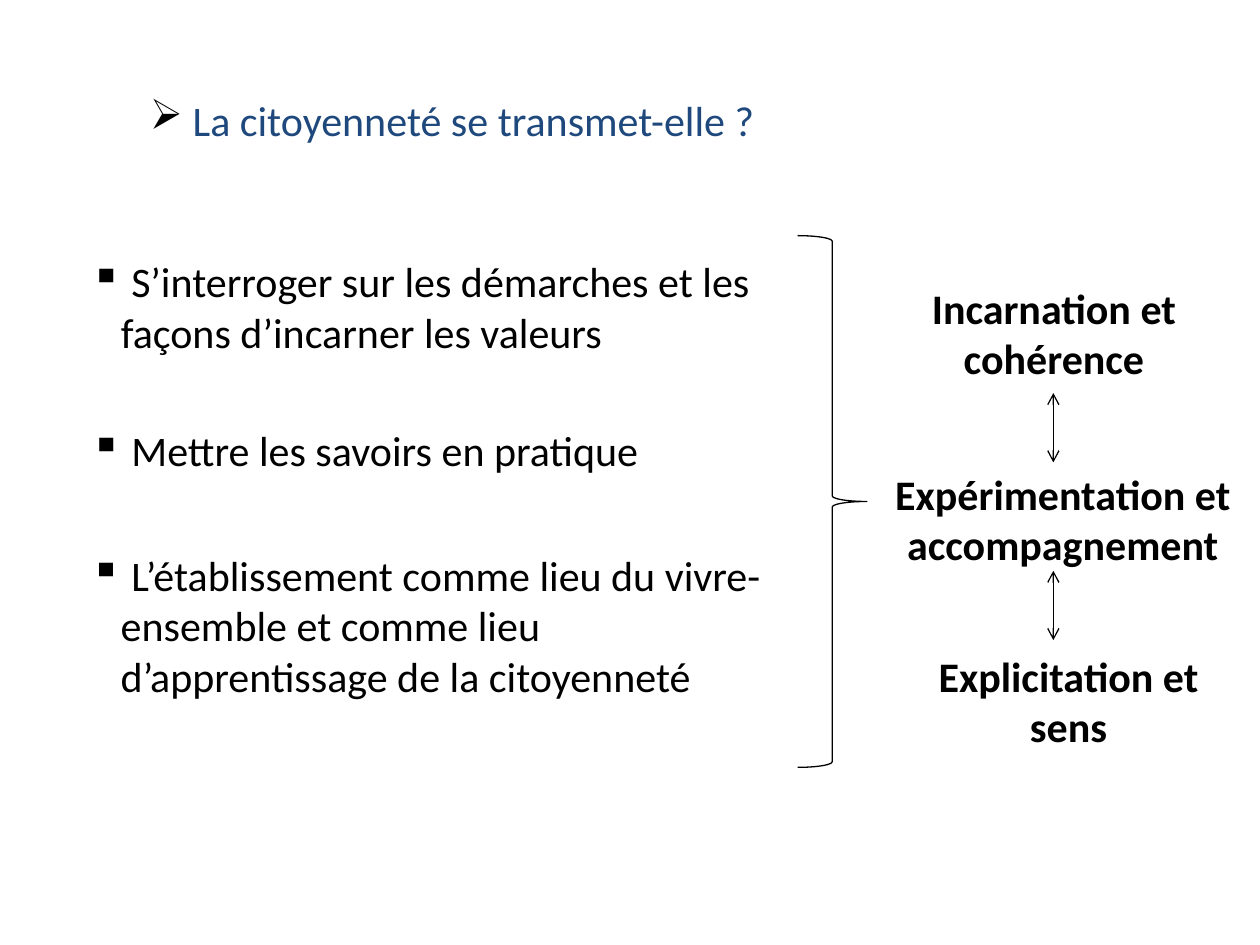
"""Build a slide on how citizenship is passed on."""
from lxml import etree
from pptx import Presentation
from pptx.dml.color import RGBColor
from pptx.enum.shapes import MSO_CONNECTOR, MSO_SHAPE
from pptx.enum.text import PP_ALIGN
from pptx.oxml.ns import qn
from pptx.util import Inches, Pt

LEFT, MID, JUST = PP_ALIGN.LEFT, PP_ALIGN.CENTER, PP_ALIGN.JUSTIFY
BRACE, LINE = MSO_SHAPE.RIGHT_BRACE, MSO_CONNECTOR.STRAIGHT
BLACK = RGBColor(0, 0, 0)
BLUE = RGBColor(0x1F, 0x49, 0x7D)
HANG = Inches(0.24)

TITLE = ("La citoyenneté se transmet-elle ?", (1.09, 0.7, 7.89, 0.5))
POINTS = [
    ("S’interroger sur les démarches et les façons d’incarner les valeurs", (0.62, 1.98, 5.78, 0.9)),
    ("Mettre les savoirs en pratique", (0.62, 3.32, 6.72, 0.5)),
    ("L’établissement comme lieu du vivre-ensemble et comme lieu "
     "d’apprentissage de la citoyenneté", (0.62, 4.31, 5.86, 1.3)),
]
STEPS = [
    ("Incarnation et cohérence", (6.88, 2.19, 2.97, 0.9)),
    ("Expérimentation et accompagnement", (6.95, 3.67, 2.97, 0.9)),
    ("Explicitation et sens", (7.27, 5.11, 2.42, 0.9)),
]
SPAN = (6.33, 1.87, 0.55, 4.22)
AXIS, REACH, TOPS = 8.36, 0.55, (3.12, 4.53)


def add_text(slide, text, area, align=LEFT, mark=None, **form):
    frame = slide.shapes.add_textbox(*map(Inches, area)).text_frame
    frame.word_wrap = True
    para = frame.paragraphs[0]
    para.alignment = align
    run = para.add_run()
    run.text = " " + text if mark else text
    font = run.font
    font.color.rgb = form.pop("color", BLACK)
    for key, val in {"name": "Calibri", "size": Pt(24), **form}.items():
        setattr(font, key, val)
    if mark:
        props = para._p.get_or_add_pPr()
        props.set("marL", str(HANG))
        props.set("indent", str(-HANG))
        tint = etree.SubElement(props, qn("a:buClr"))
        etree.SubElement(tint, qn("a:srgbClr"), val=str(BLACK))
        etree.SubElement(props, qn("a:buChar"), char=mark)


def set_line(shape):
    shape.line.color.rgb = BLACK
    shape.line.width = Pt(0.75)


def add_brace(slide):
    brace = slide.shapes.add_shape(BRACE, *map(Inches, SPAN))
    brace.shadow.inherit = False
    brace.fill.background()
    brace.adjustments[0] = 0.08
    set_line(brace)


def add_arrow(slide, top):
    ends = (AXIS, top, AXIS, top + REACH)
    arrow = slide.shapes.add_connector(LINE, *map(Inches, ends))
    set_line(arrow)
    for tag in ("a:headEnd", "a:tailEnd"):
        etree.SubElement(arrow.line._get_or_add_ln(), qn(tag), type="arrow")
    etree.SubElement(arrow._element.spPr, qn("a:effectLst"))


def main():
    deck = Presentation()
    deck.slide_width, deck.slide_height = Inches(10), Inches(7.5)
    slide = deck.slides.add_slide(deck.slide_layouts[6])
    add_text(slide, *TITLE, align=JUST, mark="➢", color=BLUE)
    for point in POINTS:
        add_text(slide, *point, mark="▪")
    add_brace(slide)
    for step in STEPS:
        add_text(slide, *step, align=MID, bold=True)
    for top in TOPS:
        add_arrow(slide, top)
    deck.save("out.pptx")


if __name__ == "__main__":
    main()
